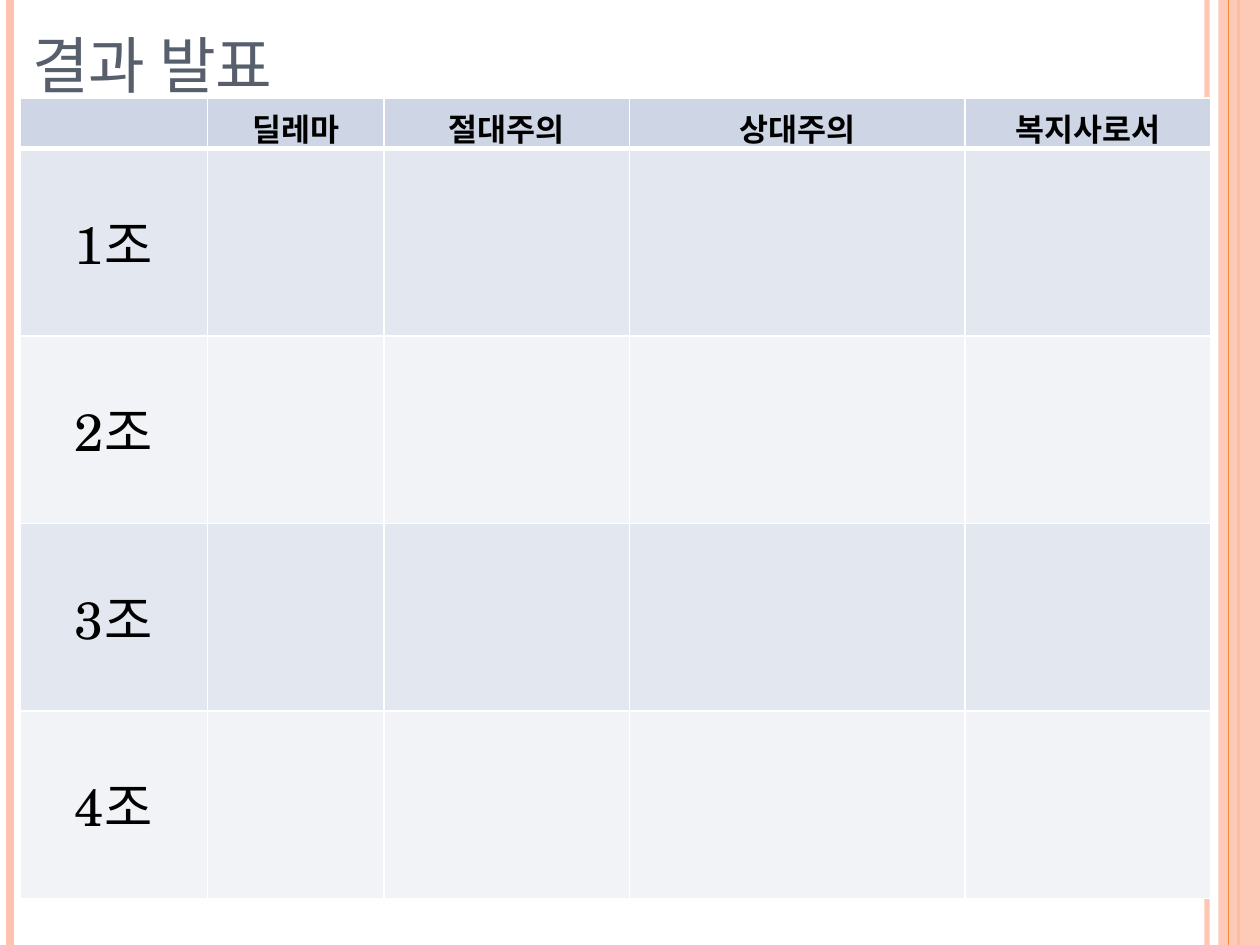
from lxml.etree import SubElement
from pptx import Presentation
from pptx.dml.color import RGBColor
from pptx.enum.shapes import MSO_CONNECTOR as Connector, MSO_SHAPE as Shape
from pptx.enum.text import MSO_ANCHOR as Anchor, PP_ALIGN as Align
from pptx.oxml.ns import qn
from pptx.util import Cm, Pt

WIDTH, HEIGHT = 25.4, 19.05
PEACH, ORANGE, SLATE = "FEC3AE", "FE8637", "575F6D"
HEADINGS = ["", "딜레마", "절대주의", "상대주의", "복지사로서"]
GROUPS = ["1조", "2조", "3조", "4조"]
COLUMN_WIDTHS = [3.78, 3.56, 4.95, 6.76, 4.95]
HEADING_HEIGHT, GROUP_HEIGHT = 0.99, 3.78
HEADING_FILL, BANDS = "CED6E6", ["E3E7EF", "F2F3F7"]


def paint(color_format, color):
    color_format.rgb = RGBColor.from_string(color)


def set_alpha(properties, percent):
    color = next(properties.iter(qn("a:srgbClr")))
    SubElement(color, qn("a:alpha"), val=str(percent * 1000))


class SlideBuilder:
    """Holds the style and the current slide and adds each kind of element."""

    font = "TeX Gyre Schola"

    def __init__(self, slide):
        self.slide = slide

    def stripe(self, x, color, weight, alpha=100):
        stripe = self.slide.shapes.add_connector(
            Connector.STRAIGHT, Cm(x), Cm(0), Cm(x), Cm(HEIGHT))
        stripe.line.width = Pt(weight)
        paint(stripe.line.color, color)
        properties = stripe._element.spPr
        if alpha < 100:
            set_alpha(properties, alpha)
        SubElement(properties, qn("a:effectLst"))

    def band(self, x, width, color, alpha):
        band = self.slide.shapes.add_shape(
            Shape.RECTANGLE, Cm(x), Cm(0), Cm(width), Cm(HEIGHT))
        band.shadow.inherit = False
        band.fill.solid()
        paint(band.fill.fore_color, color)
        band.line.fill.background()
        set_alpha(band._element.spPr, alpha)

    def text(self, frame, wording, color, **formats):
        run = frame.paragraphs[0].add_run()
        run.text = wording
        paint(run.font.color, color)
        for name, value in {"name": self.font, **formats}.items():
            setattr(run.font, name, value)
        return run

    def title(self, wording, x, y, width, height):
        title = self.slide.shapes.add_textbox(Cm(x), Cm(y), Cm(width), Cm(height))
        frame = title.text_frame
        frame.word_wrap = True
        frame.vertical_anchor = Anchor.BOTTOM
        run = self.text(frame, wording, SLATE, size=Pt(44))
        run.font._element.set("cap", "small")

    def cell(self, cell, wording, fill, weights, **formats):
        properties = cell._tc.get_or_add_tcPr()
        for side, weight in weights.items():
            border = SubElement(properties, qn(f"a:ln{side}"), w=str(Pt(weight)))
            solid = SubElement(border, qn("a:solidFill"))
            SubElement(solid, qn("a:srgbClr"), val="FFFFFF")
        cell.fill.solid()
        paint(cell.fill.fore_color, fill)
        if wording:
            cell.text_frame.paragraphs[0].alignment = Align.CENTER
            self.text(cell.text_frame, wording, "000000", **formats)

    def results(self, x, y):
        heights = [HEADING_HEIGHT] + [GROUP_HEIGHT] * len(GROUPS)
        table = self.slide.shapes.add_table(
            len(heights), len(HEADINGS), Cm(x), Cm(y),
            Cm(sum(COLUMN_WIDTHS)), Cm(sum(heights))).table
        for column, width in zip(table.columns, COLUMN_WIDTHS):
            column.width = Cm(width)
        for row, height in zip(table.rows, heights):
            row.height = Cm(height)
        thin = dict.fromkeys("LRTB", 1)
        for index, heading in enumerate(HEADINGS):
            self.cell(table.cell(0, index), heading, HEADING_FILL,
                      {**thin, "B": 3}, size=Pt(18), bold=True)
        for number, group in enumerate(GROUPS):
            weights = thin if number else {**thin, "T": 3}
            for index in range(len(HEADINGS)):
                cell = table.cell(number + 1, index)
                self.cell(cell, "" if index else group, BANDS[number % 2],
                          weights, size=Pt(30), bold=False)
                cell.vertical_anchor = Anchor.MIDDLE


def main():
    deck = Presentation()
    deck.slide_width, deck.slide_height = Cm(WIDTH), Cm(HEIGHT)
    builder = SlideBuilder(deck.slides.add_slide(deck.slide_layouts[6]))
    builder.stripe(24.33, PEACH, 3, alpha=93)
    builder.stripe(0.2, PEACH, 4.5)
    builder.stripe(24.97, ORANGE, 1.5)
    builder.band(24.56, 0.84, PEACH, alpha=87)
    builder.stripe(24.77, ORANGE, 0.75)
    builder.title("결과 발표", 0.4, 0, 20.75, 2.21)
    builder.results(0.4, 1.98)
    deck.save("out.pptx")


if __name__ == "__main__":
    main()
